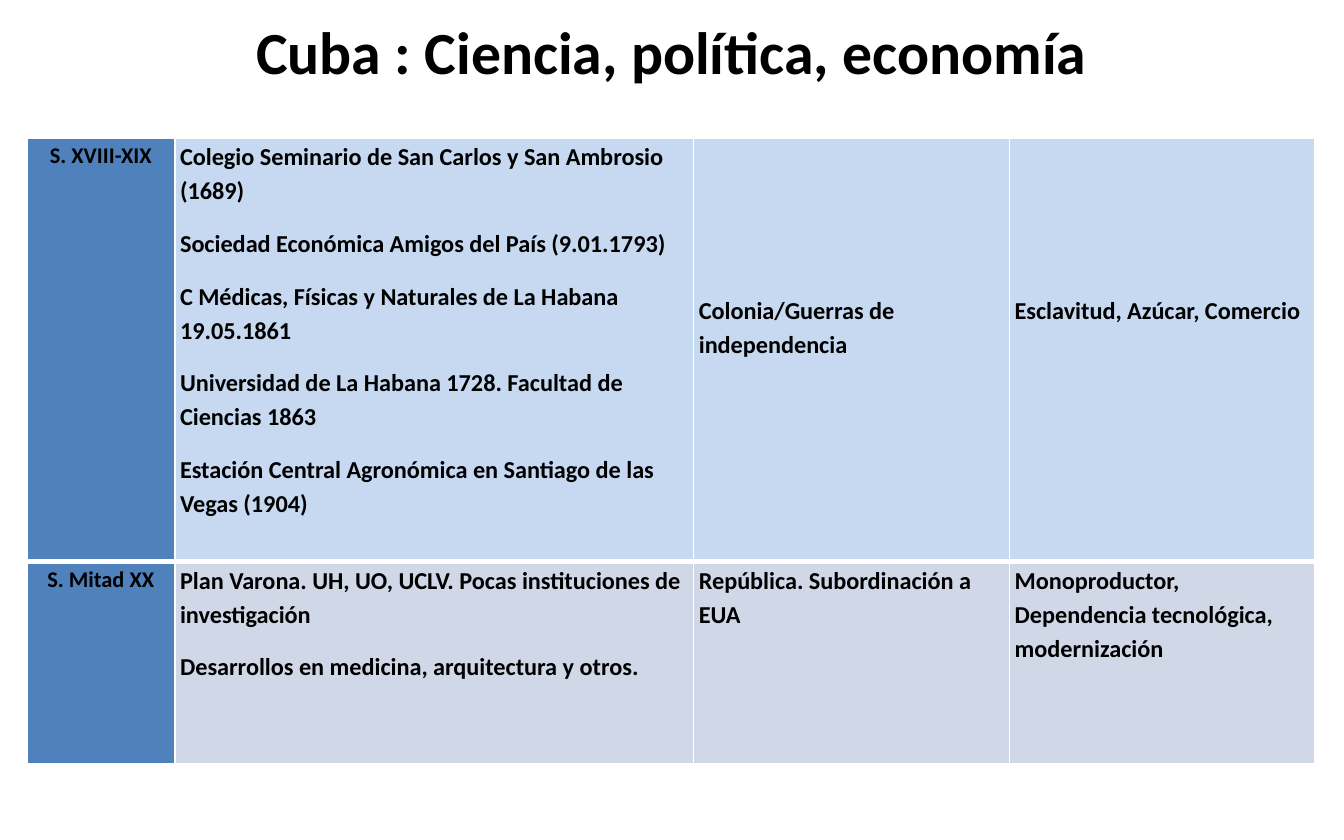
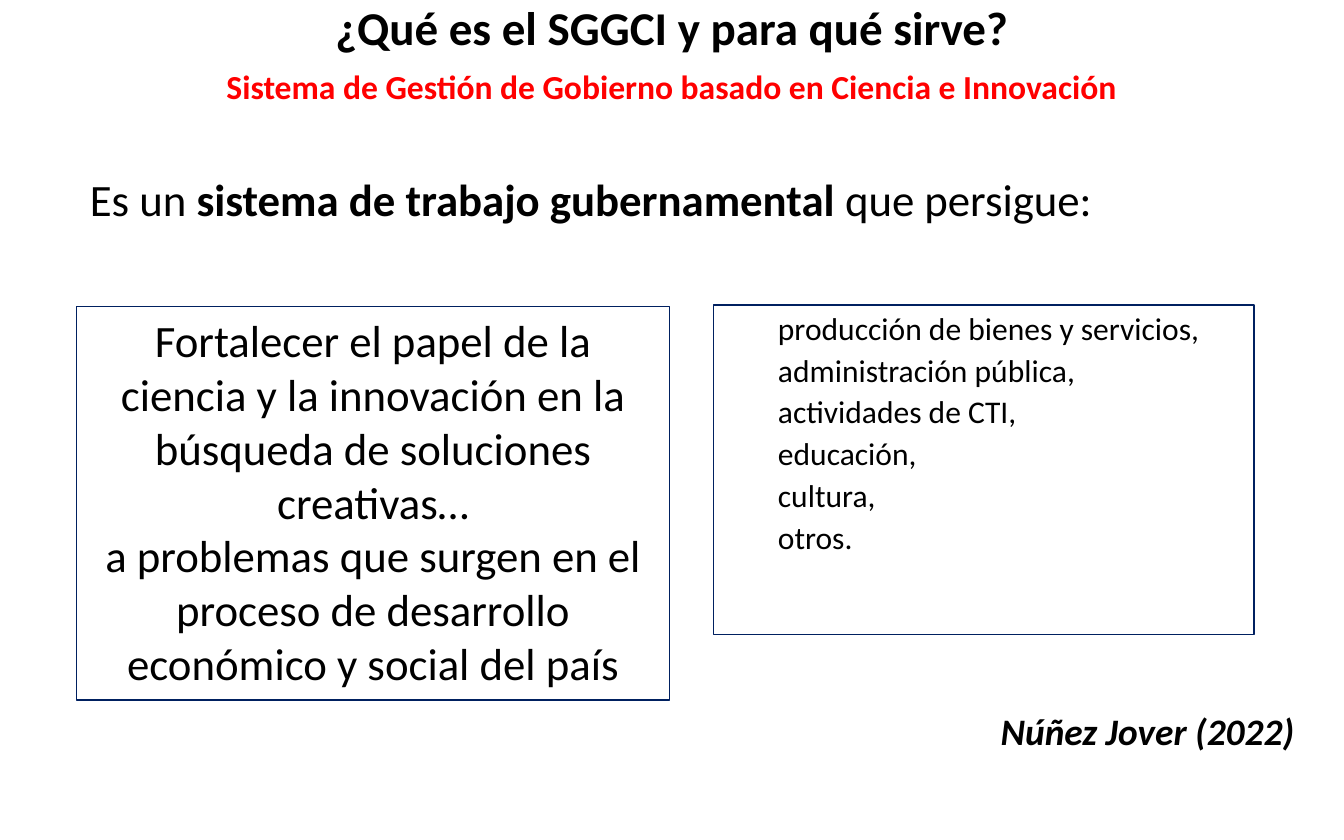
from dataclasses import dataclass

from lxml import etree
from pptx import Presentation
from pptx import util as u
from pptx.dml.color import RGBColor
from pptx.enum import shapes, text
from pptx.oxml.ns import qn

FONT = "Calibri"
BLACK, WHITE, RED, NAVY = "000000", "FFFFFF", "FF0000", "002060"
PERIOD_FILL = "4F81BD"
LEFT, CENTER, RIGHT = text.PP_ALIGN.LEFT, text.PP_ALIGN.CENTER, text.PP_ALIGN.RIGHT


@dataclass
class Span:
    text: str
    size: float
    bold: bool = False
    italic: bool = False
    color: str = BLACK


@dataclass
class Para:
    spans: list[Span]
    align: text.PP_ALIGN = LEFT
    line_spacing: float = 1.0
    before: float = 0
    after: float = 0
    indent: float = 0


@dataclass
class Area:
    left: float
    top: float
    width: float
    height: float

    def lengths(self) -> list[u.Length]:
        return [u.Inches(n) for n in (self.left, self.top, self.width, self.height)]


@dataclass
class Period:
    name: str
    cells: list[list[str]]
    height: float
    fill: str
    context_drop: float


COLUMN_WIDTHS = [1.1, 3.86, 2.35, 2.27]
PERIODS = [
    Period(
        "S. XVIII-XIX",
        [
            [
                "Colegio Seminario de San Carlos y San Ambrosio (1689)",
                "Sociedad Económica Amigos del País (9.01.1793)",
                "C Médicas, Físicas y Naturales de La Habana 19.05.1861",
                "Universidad de La Habana 1728. Facultad de Ciencias 1863",
                "Estación Central Agronómica en Santiago de las Vegas (1904)",
            ],
            ["Colonia/Guerras de independencia"],
            ["Esclavitud, Azúcar, Comercio"],
        ],
        3.15, "C6D9F1", 1.14,
    ),
    Period(
        "S. Mitad XX",
        [
            [
                "Plan Varona. UH, UO, UCLV. Pocas instituciones de investigación",
                "Desarrollos en medicina, arquitectura y otros.",
            ],
            ["República. Subordinación a EUA"],
            ["Monoproductor, Dependencia tecnológica, modernización"],
        ],
        1.5, "D0D8E8", 0,
    ),
]
SECTORS = [
    "producción de bienes y servicios,",
    "administración pública,",
    "actividades de CTI,",
    "educación,",
    "cultura,",
    "otros.",
]


def rgb(color: str) -> RGBColor:
    return RGBColor.from_string(color)


def write(frame, paras: list[Para]) -> None:
    frame.word_wrap = True
    for index, para in enumerate(paras):
        paragraph = frame.add_paragraph() if index else frame.paragraphs[0]
        paragraph.alignment = para.align
        paragraph.line_spacing = para.line_spacing
        paragraph.space_before = u.Pt(para.before if index else 0)
        paragraph.space_after = u.Pt(para.after)
        if para.indent:
            paragraph._p.get_or_add_pPr().set("marL", str(u.Inches(para.indent)))
        for span in para.spans:
            run = paragraph.add_run()
            run.text = span.text
            font = run.font
            font.name, font.size = FONT, u.Pt(span.size)
            font.bold, font.italic = span.bold, span.italic
            font.color.rgb = rgb(span.color)


def add_text(page, area: Area, paras: list[Para]):
    box = page.shapes.add_textbox(*area.lengths())
    write(box.text_frame, paras)
    return box


def add_title(page, area: Area, paras: list[Para]) -> None:
    frame = add_text(page, area, paras).text_frame
    frame.vertical_anchor = text.MSO_ANCHOR.MIDDLE
    frame.margin_top = frame.margin_bottom = 0


def add_panel(page, area: Area, paras: list[Para]) -> None:
    """Draw an unfilled rectangle with a thin navy outline around its text."""
    panel = page.shapes.add_shape(shapes.MSO_SHAPE.RECTANGLE, *area.lengths())
    panel.shadow.inherit = False
    panel.fill.background()
    panel.line.color.rgb = rgb(NAVY)
    panel.line.width = u.Pt(0.75)
    panel.text_frame.vertical_anchor = text.MSO_ANCHOR.TOP
    write(panel.text_frame, paras)


def style_cell(cell, fill: str, top: float, bottom: float) -> None:
    """Fill a cell and give it white borders; top and bottom are widths in points."""
    properties = cell._tc.get_or_add_tcPr()
    for side, width in (("lnL", 1), ("lnR", 1), ("lnT", top), ("lnB", bottom)):
        line = etree.SubElement(properties, qn(f"a:{side}"), w=str(u.Pt(width)))
        solid = etree.SubElement(line, qn("a:solidFill"))
        etree.SubElement(solid, qn("a:srgbClr"), val=WHITE)
    cell.fill.solid()
    cell.fill.fore_color.rgb = rgb(fill)
    cell.margin_left = cell.margin_right = u.Inches(0.04)
    cell.margin_top = cell.margin_bottom = 0


def cell_paras(lines: list[str], size: float, align: text.PP_ALIGN) -> list[Para]:
    return [Para([Span(line, size, bold=True)], align, 1.15, after=10) for line in lines]


def add_periods(page) -> None:
    area = Area(0.2, 1.03, sum(COLUMN_WIDTHS), sum(p.height for p in PERIODS))
    table = page.shapes.add_table(
        len(PERIODS), len(COLUMN_WIDTHS), *area.lengths()
    ).table
    table.first_row = table.horz_banding = False
    for column, width in zip(table.columns, COLUMN_WIDTHS):
        column.width = u.Inches(width)
    last = len(PERIODS) - 1
    for row, period in enumerate(PERIODS):
        table.rows[row].height = u.Inches(period.height)
        for column, lines in enumerate([[period.name], *period.cells]):
            cell = table.cell(row, column)
            is_name = column == 0
            style_cell(
                cell,
                PERIOD_FILL if is_name else period.fill,
                top=3 if row else 1,
                bottom=3 if row < last else 1,
            )
            if column >= 2:
                cell.margin_top = u.Inches(period.context_drop)
            size, align = (12, CENTER) if is_name else (13, LEFT)
            write(cell.text_frame, cell_paras(lines, size, align))


def build_history(page) -> None:
    heading = Span("Cuba : Ciencia, política, economía", 32, bold=True)
    add_title(page, Area(0, -0.01, 10, 0.78), [Para([heading], CENTER)])
    add_periods(page)


def build_system(page) -> None:
    question = Span("¿Qué es el SGGCI y para qué sirve?", 25.2, bold=True)
    meaning = Span(
        "Sistema de Gestión de Gobierno basado en Ciencia e Innovación",
        18, bold=True, color=RED,
    )
    add_title(
        page,
        Area(0, 0, 10, 0.78),
        [Para([question], CENTER), Para([meaning], CENTER, before=6)],
    )
    add_panel(
        page,
        Area(5.31, 2.27, 4.02, 2.45),
        [
            Para([Span(sector, 16.9)], line_spacing=0.94, before=3.4, indent=0.38)
            for sector in SECTORS
        ],
    )
    intro = [
        Span("Es un ", 24),
        Span("sistema de trabajo gubernamental ", 24, bold=True),
        Span("que persigue:", 24),
    ]
    add_text(page, Area(0.57, 1.23, 9.4, 0.98), [Para(intro)])
    goals = [
        "Fortalecer el papel de la ciencia y la innovación en la búsqueda "
        "de soluciones creativas…",
        "a problemas que surgen en el proceso de desarrollo económico "
        "y social del país",
    ]
    add_panel(
        page,
        Area(0.57, 2.28, 4.41, 2.93),
        [Para([Span(goal, 24)], CENTER) for goal in goals],
    )
    author = Span("Núñez Jover (2022)", 20, bold=True, italic=True)
    add_text(page, Area(5.63, 5.22, 4.1, 0.44), [Para([author], RIGHT)])


def main() -> None:
    deck = Presentation()
    deck.slide_width, deck.slide_height = u.Inches(10), u.Inches(6.25)
    for build in (build_history, build_system):
        build(deck.slides.add_slide(deck.slide_layouts[6]))
    deck.save("out.pptx")


if __name__ == "__main__":
    main()
